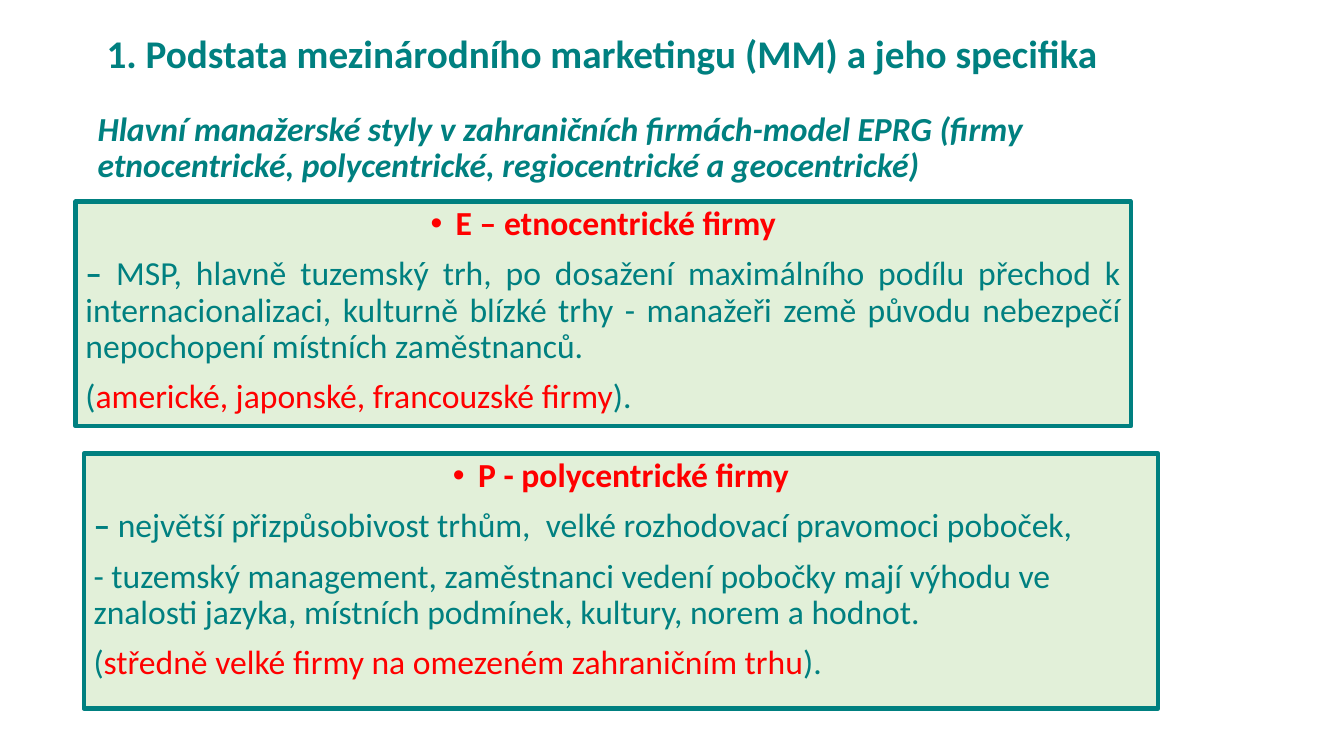
"""Build the slide on ethnocentric and polycentric firms in the EPRG model."""
from pptx import Presentation
from pptx.dml.color import RGBColor
from pptx.enum.shapes import MSO_SHAPE as Shape
from pptx.enum.text import MSO_ANCHOR as Anchor, PP_ALIGN as Align
from pptx.util import Pt
from lxml.etree import SubElement
from pptx.oxml.ns import qn

COLORS = {"teal": "008080", "red": "FF0000", "green": "E2F0D9"}


def color(name):
    return RGBColor.from_string(COLORS[name])


def add_span(para, text, ink, size=24, bold=False, italic=False):
    span = para.add_run()
    span.text = text
    span.font.name = "Calibri"
    span.font.size = Pt(size)
    span.font.bold = bold
    span.font.italic = italic
    span.font.color.rgb = color(ink)


deck = Presentation()
deck.slide_width, deck.slide_height = Pt(960), Pt(540)
page = deck.slides.add_slide(deck.slide_layouts[6])

subtitle = page.shapes.add_textbox(Pt(62.64), Pt(68.4), Pt(708.48), Pt(75.6))
subtitle.text_frame.word_wrap = True
subtitle.text_frame.vertical_anchor = Anchor.MIDDLE
para = subtitle.text_frame.paragraphs[0]
para.line_spacing = 0.9
add_span(para, "Hlavní manažerské styly v zahraničních firmách-model EPRG (firmy "
         "etnocentrické, polycentrické, regiocentrické a geocentrické)",
         "teal", bold=True, italic=True)

firm_types = [
    ((54, 144, 753.84, 160.56), "E – etnocentrické firmy", Align.JUSTIFY,
     ["MSP, hlavně tuzemský trh, po dosažení maximálního podílu přechod k "
      "internacionalizaci, kulturně blízké trhy - manažeři země původu nebezpečí "
      "nepochopení místních zaměstnanců."],
     "americké, japonské, francouzské firmy"),
    ((59.76, 324, 767.52, 182.16), "P - polycentrické firmy", Align.LEFT,
     ["největší přizpůsobivost trhům,  velké rozhodovací pravomoci poboček,",
      "- tuzemský management, zaměstnanci vedení pobočky mají výhodu ve "
      "znalosti jazyka, místních podmínek, kultury, norem a hodnot."],
     "středně velké firmy na omezeném zahraničním trhu"),
]

for place, heading, alignment, details, examples in firm_types:
    box = page.shapes.add_shape(Shape.RECTANGLE, *map(Pt, place))
    box.shadow.inherit = False
    box.fill.solid()
    box.fill.fore_color.rgb = color("green")
    box.line.color.rgb = color("teal")
    box.line.width = Pt(3)
    frame = box.text_frame
    frame.word_wrap = True
    frame.vertical_anchor = Anchor.TOP

    para = frame.paragraphs[0]
    props = para._p.get_or_add_pPr()
    props.set("marL", str(Pt(18)))
    props.set("indent", str(-Pt(18)))
    SubElement(props, qn("a:buFont")).set("typeface", "Arial")
    SubElement(props, qn("a:buChar")).set("char", "•")
    add_span(para, heading, "red", bold=True)

    for index, detail in enumerate(details):
        para = frame.add_paragraph()
        para.alignment = alignment
        if index == 0:
            add_span(para, "– ", "teal", bold=True)
        add_span(para, detail, "teal")

    para = frame.add_paragraph()
    add_span(para, "(", "teal")
    add_span(para, examples, "red")
    add_span(para, ").", "teal")

    for index, para in enumerate(frame.paragraphs):
        para.alignment = para.alignment or Align.LEFT
        para.line_spacing = 0.9
        para.space_before = Pt(10 if index else 0)

title = page.shapes.add_textbox(Pt(67.68), Pt(17.28), Pt(724.32), Pt(41.04))
title.text_frame.word_wrap = False
para = title.text_frame.paragraphs[0]
para.alignment = Align.CENTER
add_span(para, "1. Podstata mezinárodního marketingu (MM) a jeho specifika",
         "teal", size=28, bold=True)

deck.save("out.pptx")
